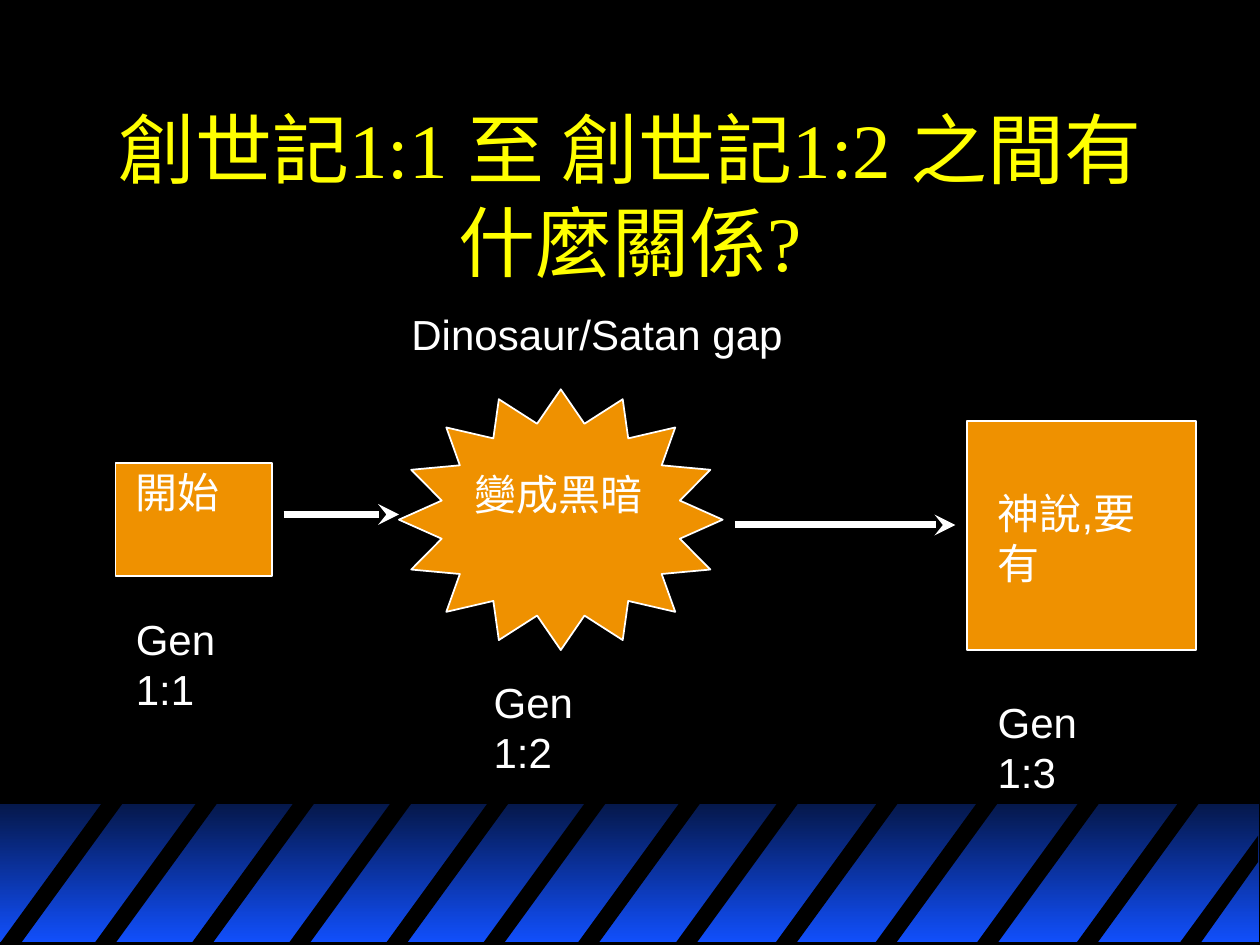
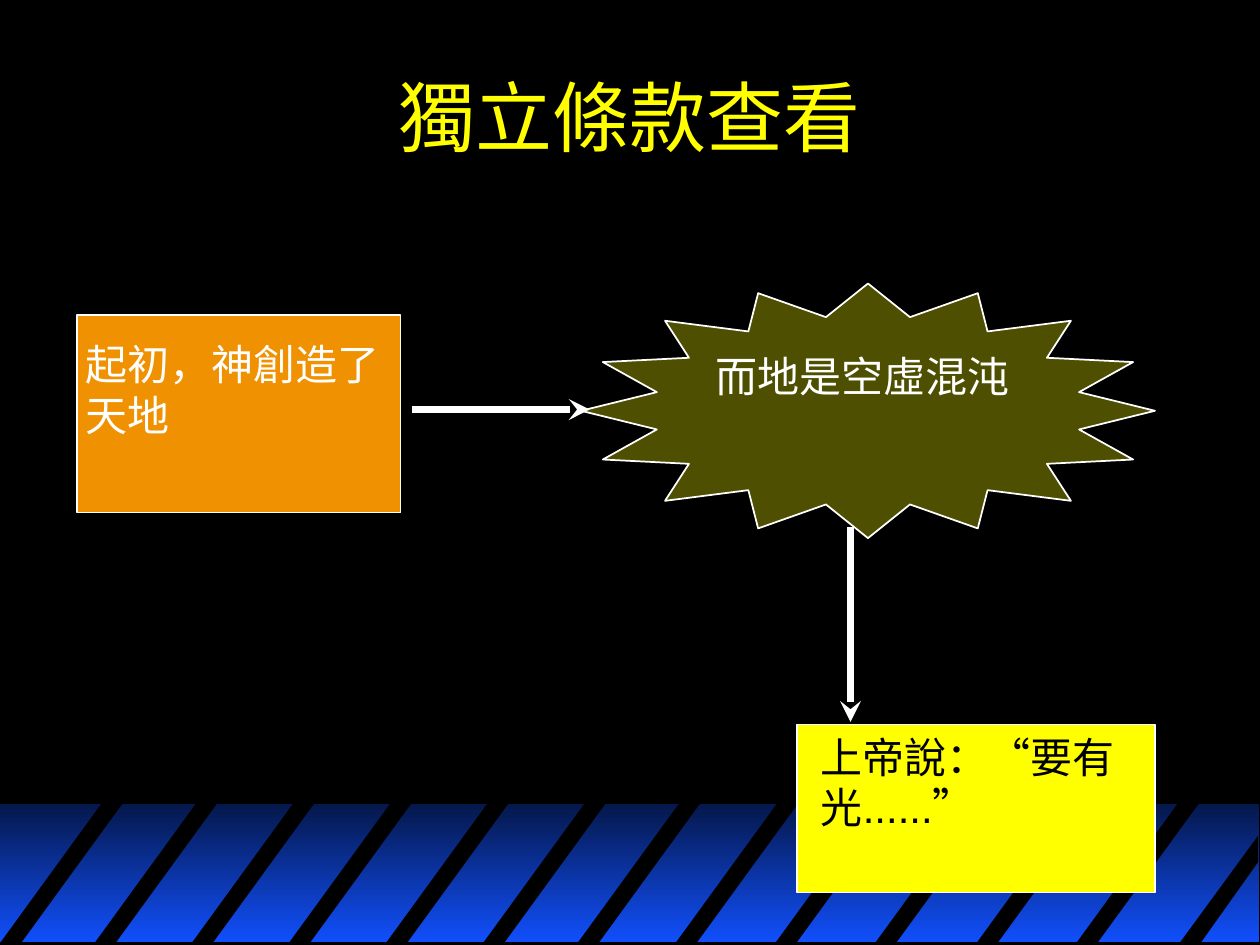
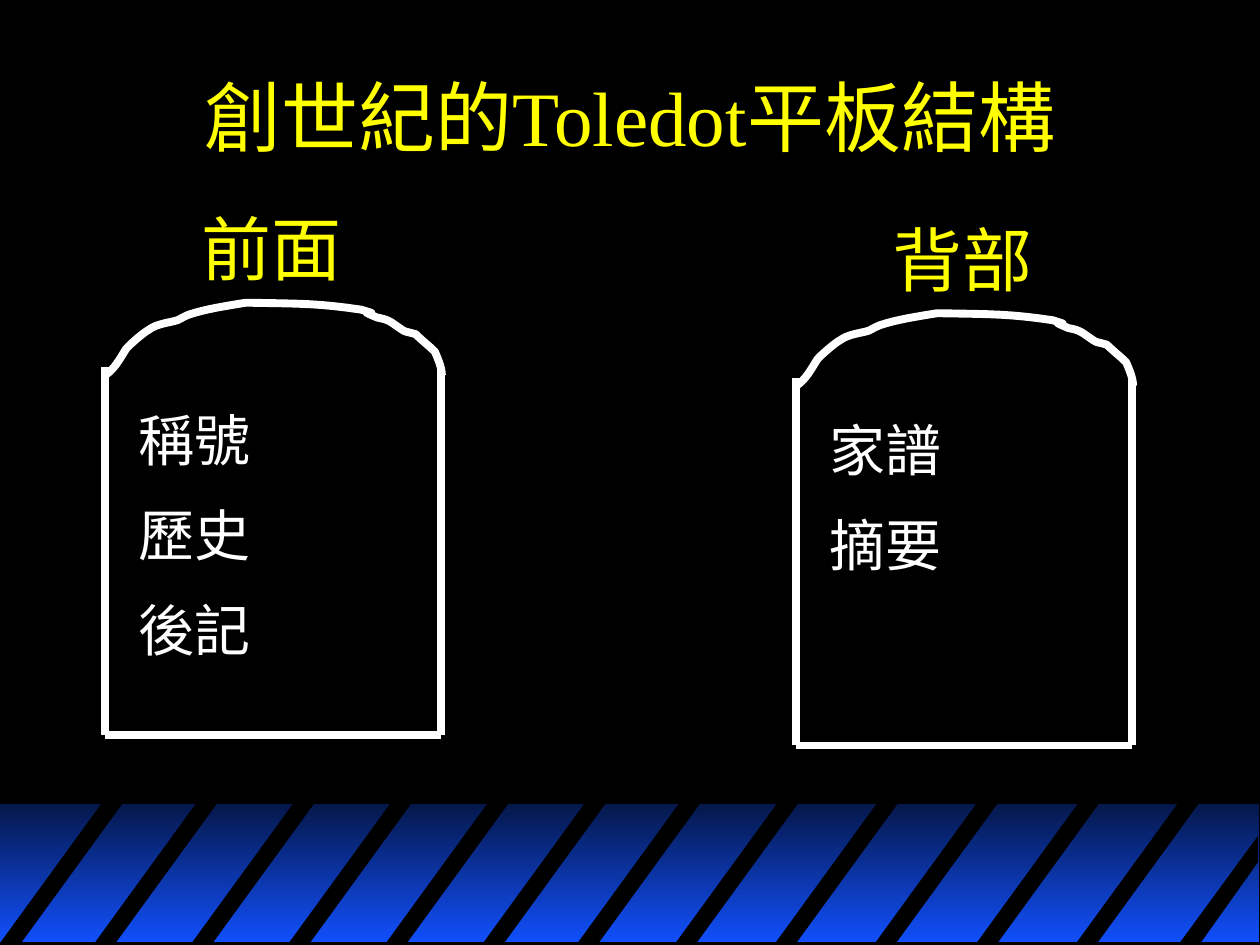
import pptx
import pptx.util
import pptx.dml.color
import pptx.enum.shapes
import pptx.enum.text
import pptx.oxml.ns
import lxml.etree

Pt = pptx.util.Pt
MSO_SHAPE = pptx.enum.shapes.MSO_SHAPE
qn = pptx.oxml.ns.qn

hex_colors = {
    "black": "000000", "white": "FFFFFF", "yellow": "FFFF00", "orange": "EF9100",
    "olive": "4E4F00", "band_top": "05184B", "band_foot": "114FFB",
}
colors = {name: pptx.dml.color.RGBColor.from_string(value) for name, value in hex_colors.items()}

fonts = {
    "title": {"name": "Times New Roman", "size": Pt(44)},
    "label": {"name": "Arial", "size": Pt(24)},
    "heading": {"name": "Arial", "size": Pt(40)},
    "list": {"name": "Arial", "size": Pt(32)},
}
paragraph_formats = {
    "title": {"alignment": pptx.enum.text.PP_ALIGN.CENTER},
    "label": {},
    "heading": {},
    "list": {"space_before": Pt(16)},
}
frame_format = {
    "word_wrap": True, "auto_size": pptx.enum.text.MSO_AUTO_SIZE.NONE,
    "margin_left": Pt(7.2), "margin_right": Pt(7.2),
    "margin_top": Pt(3.6), "margin_bottom": Pt(3.6),
}


def write_text(shape, paragraphs, style, color):
    frame = shape.text_frame
    for name, value in frame_format.items():
        setattr(frame, name, value)
    for index, runs in enumerate(paragraphs):
        paragraph = frame.add_paragraph() if index else frame.paragraphs[0]
        for name, value in paragraph_formats[style].items():
            setattr(paragraph, name, value)
        for text in runs:
            run = paragraph.add_run()
            run.text = text
            for name, value in fonts[style].items():
                setattr(run.font, name, value)
            run.font.color.rgb = colors[color]


def draw_line(slide, ends, width, arrow=False):
    line = slide.shapes.add_connector(
        pptx.enum.shapes.MSO_CONNECTOR.STRAIGHT, *[Pt(value) for value in ends])
    line.line.width = Pt(width)
    line.line.color.rgb = colors["white"]
    if arrow:
        lxml.etree.SubElement(line.line._get_or_add_ln(), qn("a:tailEnd"), type="stealth")
    lxml.etree.SubElement(line.element.spPr, qn("a:effectLst"))


presentation = pptx.Presentation()
presentation.slide_width = Pt(720)
presentation.slide_height = Pt(540)
master = presentation.slide_master
master.background.fill.solid()
master.background.fill.fore_color.rgb = colors["black"]

titles = [
    (63, ["創世記1:1 至 創世記1:2 之間有什麼關係?"]),
    (18, ["獨立條款查看"]),
    (18, ["創世紀", "的", "Toledot平板結構"]),
]
slides = []
for top, runs in titles:
    slide = presentation.slides.add_slide(presentation.slide_layouts[5])
    title = slide.shapes.title
    title.left, title.top, title.width, title.height = Pt(54), Pt(top), Pt(612), Pt(96)
    write_text(title, [runs], "title", "yellow")
    title.text_frame.vertical_anchor = pptx.enum.text.MSO_ANCHOR.MIDDLE
    slides.append(slide)
gap_slide, clause_slide, tablet_slide = slides
tablet_slide.shapes.title.text_frame.paragraphs[0].runs[1].font.name = "Arial"

band_group = gap_slide.shapes.add_group_shape()
band = band_group.shapes.add_shape(MSO_SHAPE.RECTANGLE, 0, Pt(459.5), Pt(719.5), Pt(79))
band.shadow.inherit = False
band.line.fill.background()
band.fill.gradient()
band.fill.gradient_angle = 270
for stop, name in zip(band.fill.gradient_stops, ["band_top", "band_foot"]):
    stop.color.rgb = colors[name]
    stop.position = 0 if name == "band_top" else 1

stripe_lefts = [0, 54, 109.5, 165, 220.5, 276, 330, 386, 443, 500, 558, 615]
stripes = [[(left, 539), (left + 60, 456.5), (left + 72, 456.5), (left + 12, 539)]
           for left in stripe_lefts]
stripes.append([(674, 539), (719, 477.5), (719, 492.5), (686, 539)])
for stripe in stripes:
    corners = [(Pt(x), Pt(y)) for x, y in stripe]
    builder = band_group.shapes.build_freeform(*corners[0])
    builder.add_line_segments(corners[1:], close=True)
    shape = builder.convert_to_shape()
    shape.shadow.inherit = False
    shape.fill.solid()
    shape.fill.fore_color.rgb = colors["black"]
    shape.line.fill.background()
for number, properties in enumerate(band_group.element.iter(qn("p:cNvPr")), 100):
    properties.set("id", str(number))
master.shapes[0].element.addprevious(band_group.element)

blocks = [
    (gap_slide, MSO_SHAPE.STAR_16_POINT, (228, 222.5, 185, 149), "orange"),
    (gap_slide, MSO_SHAPE.RECTANGLE, (66, 264.5, 89.5, 64.5), "orange"),
    (gap_slide, MSO_SHAPE.RECTANGLE, (552.5, 240.5, 131, 131), "orange"),
    (clause_slide, MSO_SHAPE.STAR_16_POINT, (332, 162, 328, 145.5), "olive"),
    (clause_slide, MSO_SHAPE.RECTANGLE, (44, 180, 185, 113), "orange"),
    (clause_slide, MSO_SHAPE.RECTANGLE, (455.5, 414, 204.5, 96), "yellow"),
]
for slide, kind, box, color in blocks:
    block = slide.shapes.add_shape(kind, *[Pt(value) for value in box])
    block.shadow.inherit = False
    block.fill.solid()
    block.fill.fore_color.rgb = colors[color]
    block.line.color.rgb = colors["white"]
    block.line.width = Pt(1)

arrows = [
    (gap_slide, (162, 294, 228, 294)),
    (gap_slide, (420, 300, 546, 300)),
    (clause_slide, (235.5, 234, 337, 234)),
    (clause_slide, (486, 301, 486, 412.5)),
]
for slide, ends in arrows:
    draw_line(slide, ends, 4, arrow=True)

labels = [
    (gap_slide, (70.5, 263, 63.5, 36.5), "開始", "white"),
    (gap_slide, (264, 264, 112, 36.5), "變成黑暗", "white"),
    (gap_slide, (563, 275, 109.5, 93.5), "神說,要有", "white"),
    (gap_slide, (70.5, 347, 99, 36), "Gen 1:1", "white"),
    (gap_slide, (275, 383, 99, 36), "Gen 1:2", "white"),
    (gap_slide, (563, 394.5, 99, 36), "Gen 1:3", "white"),
    (gap_slide, (228, 173, 229, 36.5), "Dinosaur/Satan gap", "white"),
    (clause_slide, (42, 190, 192, 93.5), "起初，神創造了天地", "white"),
    (clause_slide, (402, 196.5, 230.5, 65), "而地是空虛混沌", "white"),
    (clause_slide, (462, 414.5, 194.5, 94.5), "上帝說：“要有光......”", "black"),
]
for slide, box, text, color in labels:
    label = slide.shapes.add_textbox(*[Pt(value) for value in box])
    write_text(label, [[text]], "label", color)

arch_start = (60, 214.5)
arch_curves = [
    [(65.5, 211), (68.5, 205), (72, 199.5)],
    [(73.5, 197.5), (82, 190), (85, 188.5)],
    [(89.5, 185), (96.5, 184.5), (101.5, 183)],
    [(103.5, 182), (105, 181), (107.5, 180)],
    [(117.5, 176.5), (129, 175), (140.5, 173)],
    [(172, 173.5), (183, 173.5), (206.5, 177)],
    [(222.5, 182), (198.5, 174.5), (215.5, 181.5)],
    [(218, 182), (221, 182.5), (224, 184.5)],
    [(233.5, 191), (229, 188.5), (237.5, 191)],
    [(241, 194.5), (245, 197.5), (248.5, 201)],
    [(250, 204.5), (252.5, 210), (252.5, 214.5)],
]
arch_points = [arch_start]
for curve in arch_curves:
    controls = [arch_points[-1], *curve]
    for step in range(1, 9):
        t = step / 8
        weights = [(1 - t) ** 3, 3 * t * (1 - t) ** 2, 3 * t ** 2 * (1 - t), t ** 3]
        arch_points.append(tuple(
            sum(weight * control[axis] for weight, control in zip(weights, controls))
            for axis in (0, 1)))

tablets = [
    (0, 0, "前面", ["稱號", "歷史", "後記"]),
    (395, 6, "背部", ["家譜", "摘要"]),
]
for shift_x, shift_y, heading, entries in tablets:
    left, right = 60 + shift_x, 252 + shift_x
    top, bottom = 210 + shift_y, 420 + shift_y
    for ends in [(left, bottom, left, top), (right, bottom, right, top),
                 (left, bottom, right, bottom)]:
        draw_line(tablet_slide, ends, 4.5)
    points = [(Pt(x + shift_x), Pt(y + shift_y)) for x, y in arch_points]
    builder = tablet_slide.shapes.build_freeform(*points[0])
    builder.add_line_segments(points[1:], close=False)
    arch = builder.convert_to_shape()
    arch.shadow.inherit = False
    arch.fill.background()
    arch.line.color.rgb = colors["white"]
    arch.line.width = Pt(4.5)
    entry_box = tablet_slide.shapes.add_textbox(
        Pt(72 + shift_x), Pt(228 + shift_y), Pt(168), Pt(160))
    write_text(entry_box, [[entry] for entry in entries], "list", "white")
    heading_box = tablet_slide.shapes.add_textbox(
        Pt(108 + shift_x), Pt(114 + shift_y), Pt(120), Pt(55.5))
    write_text(heading_box, [[heading]], "heading", "yellow")

presentation.save("out.pptx")
